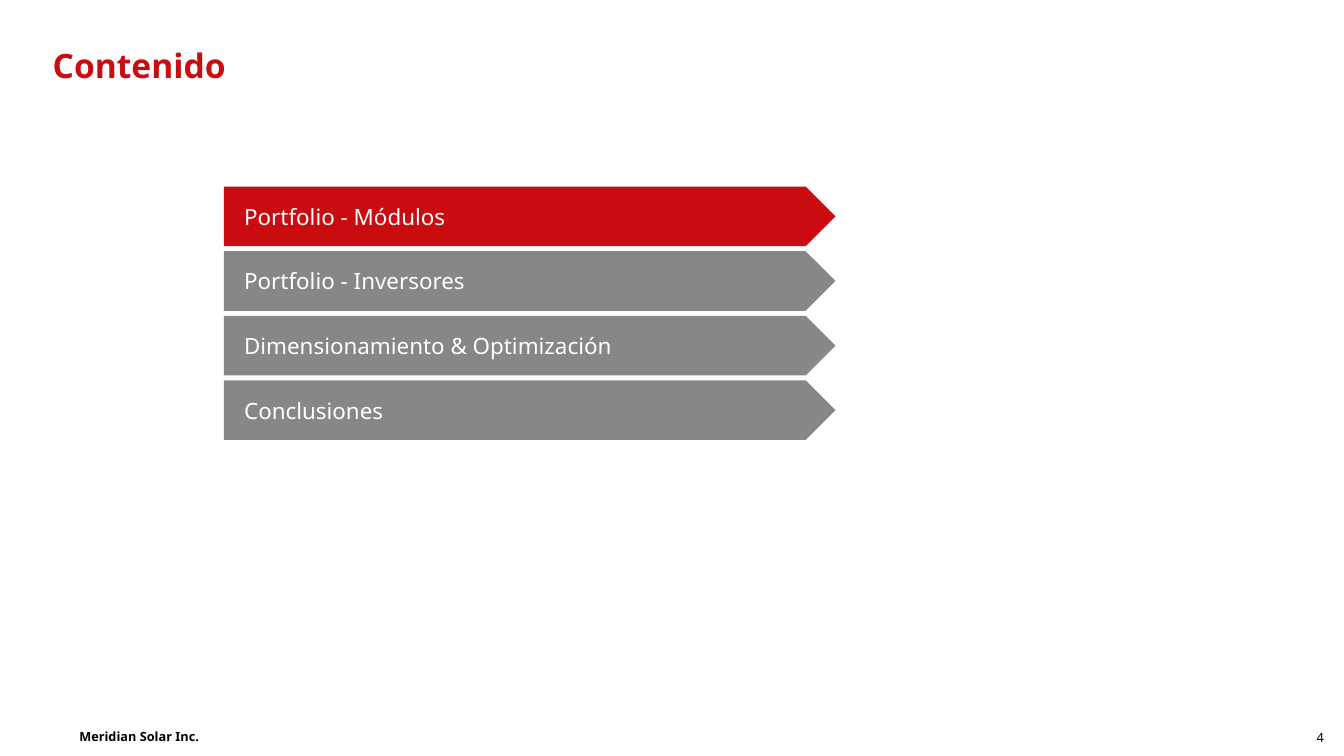
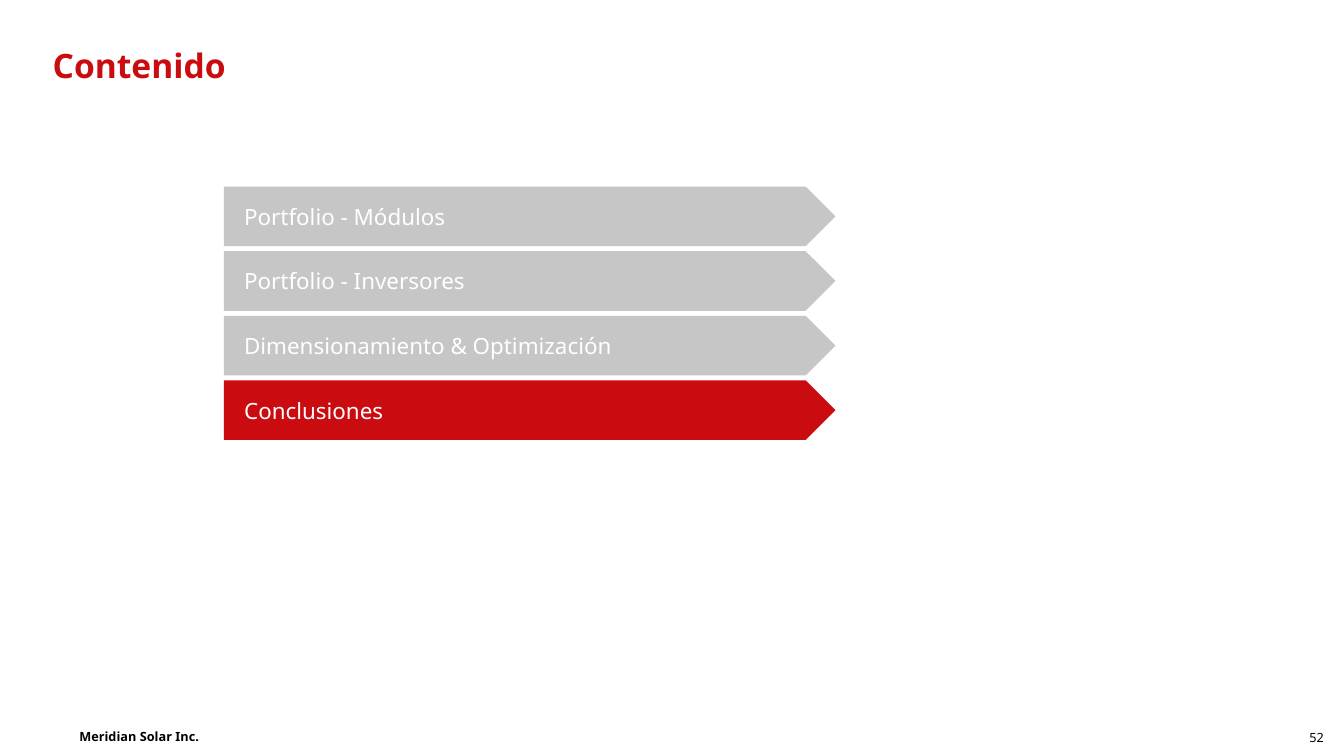
from dataclasses import dataclass

import pptx
import pptx.dml.color
import pptx.enum.shapes
import pptx.enum.text
import pptx.presentation
import pptx.shapes.autoshape
import pptx.slide
import pptx.util

Pt = pptx.util.Pt
RGBColor = pptx.dml.color.RGBColor
Align = pptx.enum.text.PP_ALIGN
Anchor = pptx.enum.text.MSO_ANCHOR

RED = RGBColor(0xCA, 0x0B, 0x0F)
DARK_GREY = RGBColor(0x86, 0x88, 0x87)
LIGHT_GREY = RGBColor(0xC6, 0xC6, 0xC6)
WHITE = RGBColor(0xFF, 0xFF, 0xFF)
BLACK = RGBColor(0x00, 0x00, 0x00)

FONT = "Noto Sans"
TITLE = "Contenido"
COMPANY = "Meridian Solar Inc."
CHAPTERS = (
    "Portfolio - Módulos",
    "Portfolio - Inversores",
    "Dimensionamiento & Optimización",
    "Conclusiones",
)
CHAPTER_LEFT = 120
CHAPTER_TOP = 100
CHAPTER_WIDTH = 327.6
CHAPTER_HEIGHT = 31.9
CHAPTER_PITCH = 34.6


@dataclass(frozen=True)
class Box:
    left: float
    top: float
    width: float
    height: float

    def lengths(self) -> tuple[pptx.util.Length, ...]:
        return Pt(self.left), Pt(self.top), Pt(self.width), Pt(self.height)


@dataclass(frozen=True)
class TextStyle:
    size: float
    color: RGBColor
    bold: bool = False
    align: Align = Align.LEFT
    anchor: Anchor = Anchor.MIDDLE
    side_inset: float = 0


@dataclass(frozen=True)
class Agenda:
    page: int
    current: int
    other_fill: RGBColor


TITLE_BOX = Box(28.2, 24, 469.4, 51)
COMPANY_BOX = Box(42.5, 387.4, 96.5, 13.7)
PAGE_BOX = Box(689, 387.4, 20.2, 15.1)

TITLE_STYLE = TextStyle(18, RED, bold=True, anchor=Anchor.TOP)
COMPANY_STYLE = TextStyle(6.8, BLACK, bold=True)
PAGE_STYLE = TextStyle(6.8, BLACK, align=Align.RIGHT)
CHAPTER_STYLE = TextStyle(12, WHITE, side_inset=10.8)

AGENDAS = (
    Agenda(page=4, current=0, other_fill=DARK_GREY),
    Agenda(page=52, current=3, other_fill=LIGHT_GREY),
)


def write(shape: pptx.shapes.autoshape.Shape, text: str, style: TextStyle) -> None:
    frame = shape.text_frame
    frame.word_wrap = True
    frame.vertical_anchor = style.anchor
    frame.margin_left = frame.margin_right = Pt(style.side_inset)
    frame.margin_top = frame.margin_bottom = Pt(0)
    frame.text = text
    paragraph = frame.paragraphs[0]
    paragraph.alignment = style.align
    font = paragraph.runs[0].font
    font.name = FONT
    font.size = Pt(style.size)
    font.bold = style.bold
    font.color.rgb = style.color


def add_label(slide: pptx.slide.Slide, box: Box, text: str, style: TextStyle) -> None:
    write(slide.shapes.add_textbox(*box.lengths()), text, style)


def add_chapter(slide: pptx.slide.Slide, row: int, text: str, fill: RGBColor) -> None:
    top = CHAPTER_TOP + row * CHAPTER_PITCH
    box = Box(CHAPTER_LEFT, top, CHAPTER_WIDTH, CHAPTER_HEIGHT)
    arrow = slide.shapes.add_shape(
        pptx.enum.shapes.MSO_SHAPE.PENTAGON, *box.lengths()
    )
    arrow.adjustments[0] = 0.5
    arrow.shadow.inherit = False
    arrow.fill.solid()
    arrow.fill.fore_color.rgb = fill
    arrow.line.fill.background()
    write(arrow, text, CHAPTER_STYLE)


def add_agenda(deck: pptx.presentation.Presentation, agenda: Agenda) -> None:
    slide = deck.slides.add_slide(deck.slide_layouts[6])
    add_label(slide, PAGE_BOX, str(agenda.page), PAGE_STYLE)
    add_label(slide, COMPANY_BOX, COMPANY, COMPANY_STYLE)
    for row, chapter in enumerate(CHAPTERS):
        fill = RED if row == agenda.current else agenda.other_fill
        add_chapter(slide, row, chapter, fill)
    add_label(slide, TITLE_BOX, TITLE, TITLE_STYLE)


def main() -> None:
    deck = pptx.Presentation()
    deck.slide_width = Pt(720)
    deck.slide_height = Pt(405)
    for agenda in AGENDAS:
        add_agenda(deck, agenda)
    deck.save("out.pptx")


if __name__ == "__main__":
    main()
